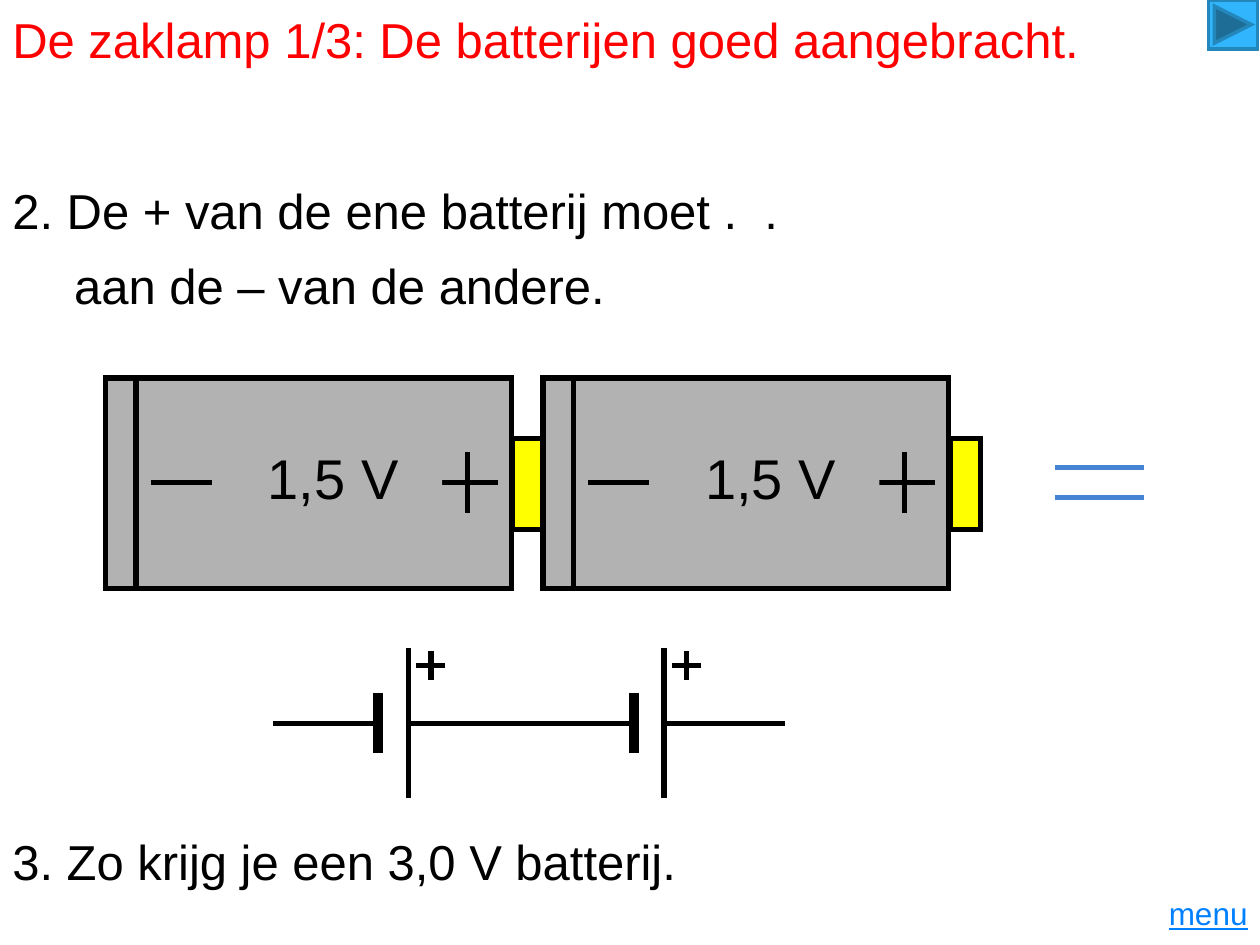
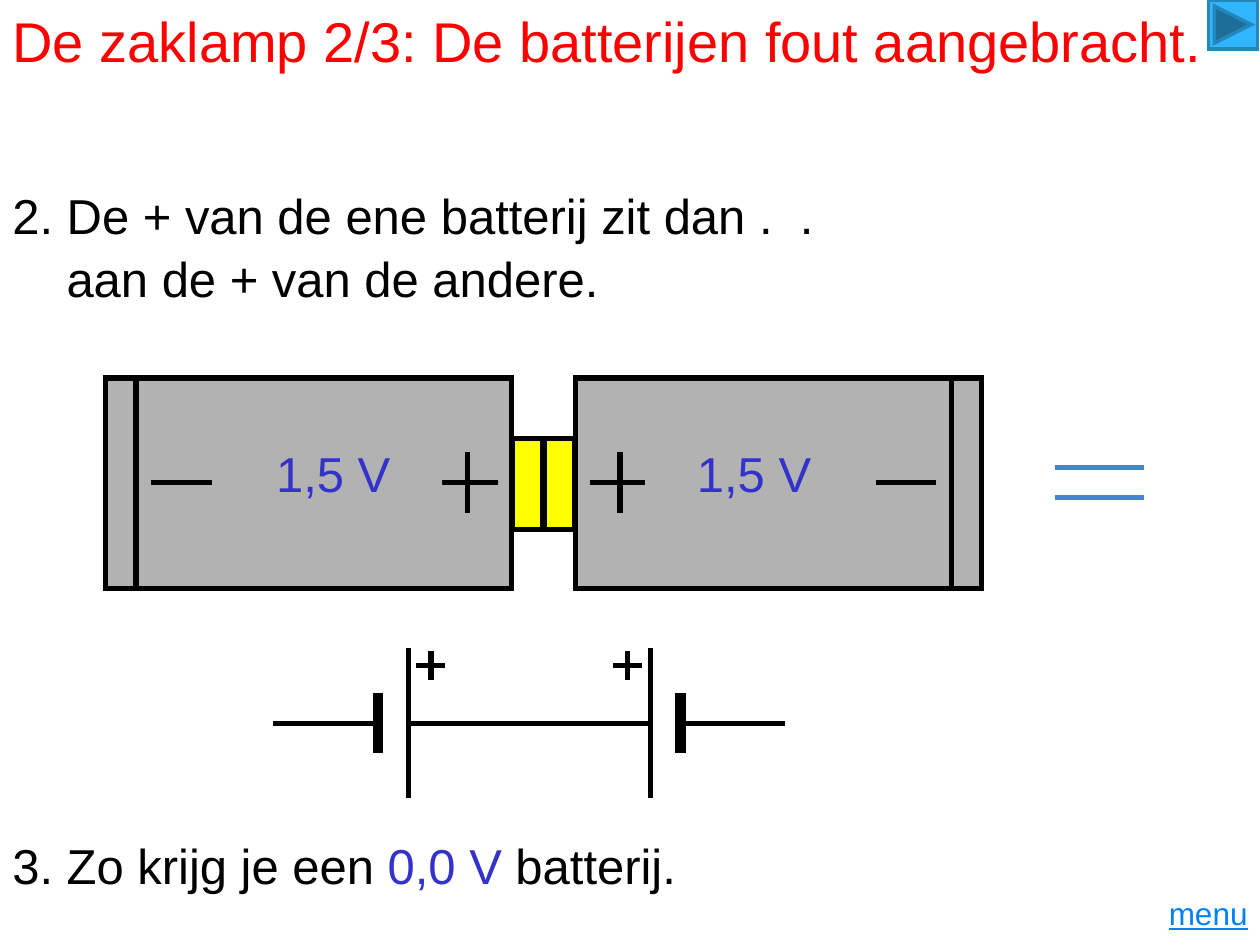
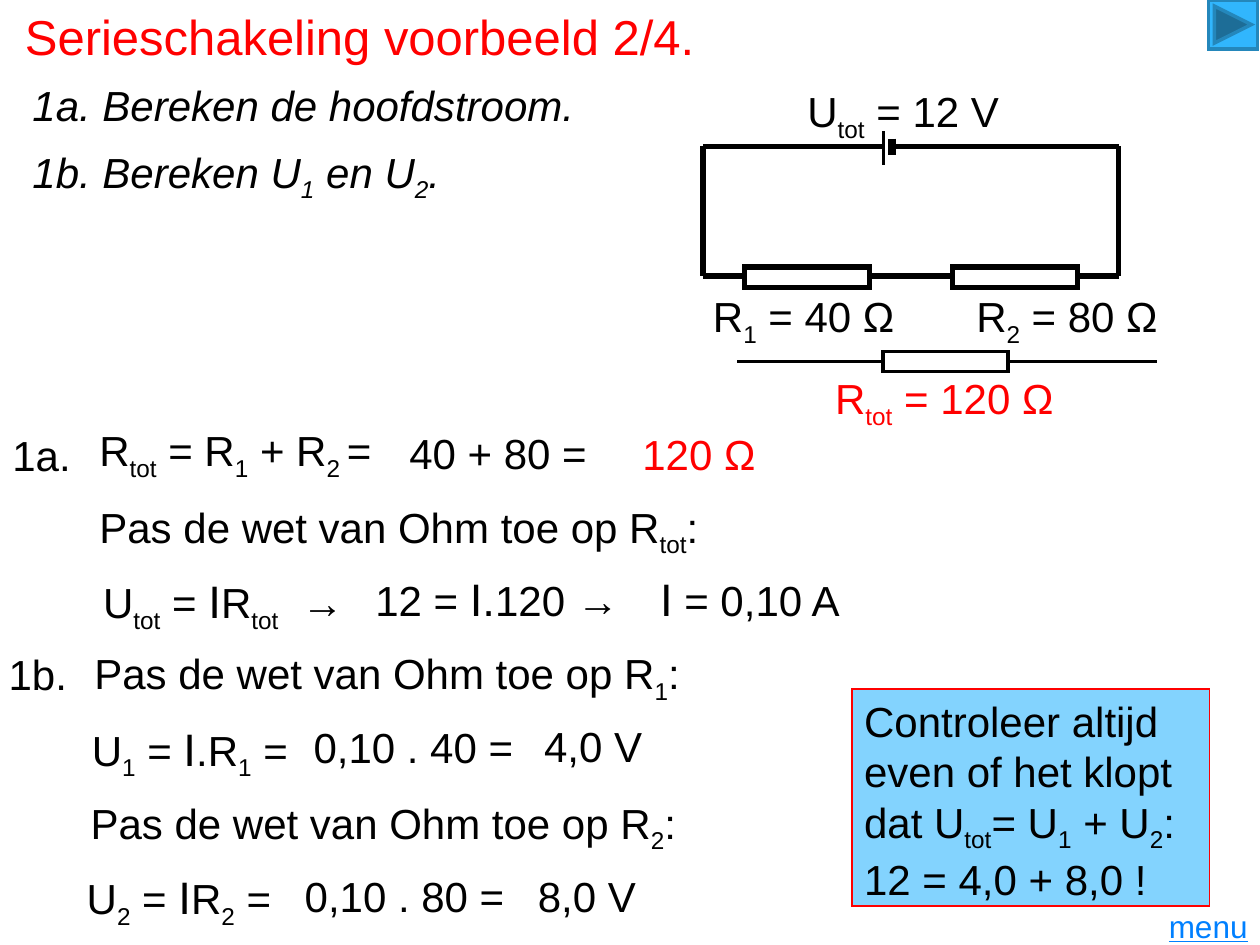
from lxml import etree
from pptx import Presentation, util as u
from pptx.dml.color import RGBColor
from pptx.enum import shapes, text
from pptx.oxml.ns import qn

FONT = "Arial"
BLACK = RGBColor(0x00, 0x00, 0x00)
WHITE = RGBColor(0xFF, 0xFF, 0xFF)
RED = RGBColor(0xFF, 0x00, 0x00)
BLUE = RGBColor(0x33, 0x33, 0xCC)
LINK = RGBColor(0x00, 0x80, 0xFF)
GREY = RGBColor(0xB2, 0xB2, 0xB2)
YELLOW = RGBColor(0xFF, 0xFF, 0x00)
EQUALS = RGBColor(0x45, 0x84, 0xD3)
BUTTON = RGBColor(0x31, 0xB6, 0xFD)
BUTTON_EDGE = RGBColor(0x24, 0x87, 0xBB)
NOTE = RGBColor(0x83, 0xD3, 0xFE)
MIDDLE = text.MSO_ANCHOR.MIDDLE


def add_runs(p, marked, size, color, italic=False, underline=False):
    """Write marked text: _subscript_, *larger symbol*, #blue#."""
    active, piece = set(), ""
    for char in marked + "\0":
        if char not in "_*#\0":
            piece += char
            continue
        if piece:
            r = p.add_run()
            r.text = piece
            r.font.name = FONT
            r.font.size = u.Pt(size + 2 if "*" in active else size)
            r.font.color.rgb = BLUE if "#" in active else color
            r.font.italic = italic
            r.font.underline = underline
            if "_" in active:
                r._r.get_or_add_rPr().set("baseline", "-25000")
        active ^= {char}
        piece = ""


def write(sp, marked, size, color=BLACK, align=text.PP_ALIGN.LEFT,
          anchor=text.MSO_ANCHOR.TOP, indent=0, **style):
    tf = sp.text_frame
    tf.word_wrap = True
    tf.vertical_anchor = anchor
    for i, line in enumerate(marked.split("\n")):
        p = tf.add_paragraph() if i else tf.paragraphs[0]
        p.alignment = align
        if indent:
            p._p.get_or_add_pPr().set("marL", str(u.Inches(indent)))
        add_runs(p, line, size, color, **style)


def add_text(s, x, y, w, h, marked, size=24, color=BLACK, **options):
    sp = s.shapes.add_textbox(*map(u.Inches, (x, y, w, h)))
    write(sp, marked, size, color, **options)


def add_box(s, x, y, w, h, fill=None, edge=None, width=3,
            kind=shapes.MSO_SHAPE.RECTANGLE):
    sp = s.shapes.add_shape(kind, *map(u.Inches, (x, y, w, h)))
    sp.shadow.inherit = False
    if fill is None:
        sp.fill.background()
    else:
        sp.fill.solid()
        sp.fill.fore_color.rgb = fill
    if edge is None:
        sp.line.fill.background()
    else:
        sp.line.color.rgb = edge
        sp.line.width = u.Pt(width)
        outline = sp._element.spPr.find(qn("a:ln"))
        etree.SubElement(outline, qn("a:miter"), lim="800000")
    return sp


def add_line(s, x1, y1, x2, y2, width=3, color=BLACK):
    c = s.shapes.add_connector(shapes.MSO_CONNECTOR.STRAIGHT,
                               *map(u.Inches, (x1, y1, x2, y2)))
    c.line.color.rgb = color
    c.line.width = u.Pt(width)
    etree.SubElement(c._element.spPr, qn("a:effectLst"))


def add_plus(s, x, y, size):
    add_line(s, x, y - size / 2, x, y + size / 2)
    add_line(s, x - size / 2, y, x + size / 2, y)


def add_battery(s, origin, size, color=BLACK, way=1):
    """Battery from its minus end at origin; way -1 points it to the left."""
    def part(start, y, w, h, fill, edge=None):
        ends = origin + way * start, origin + way * (start + w)
        return add_box(s, min(ends), y, w, h, fill, edge)

    part(0, 3, 3.22, 1.67, GREY, BLACK)
    part(3.23, 3.48, 0.24, 0.72, YELLOW, BLACK)
    stripe = origin + way * 0.24
    add_line(s, stripe, 3, stripe, 4.67)
    add_plus(s, origin + way * 2.87, 3.83, 0.48)
    add_line(s, origin + way * 0.36, 3.83, origin + way * 0.84, 3.83)
    label = part(0.94, 3.47, 1.73, size / 50, GREY)
    write(label, "1,5 V", size, color, align=text.PP_ALIGN.CENTER)


def add_cell_symbol(s, origin, way=1):
    """Circuit symbol of one cell, from its minus wire at origin."""
    minus, plate = origin + way * 0.83, origin + way * 1.07
    add_line(s, origin, 5.74, minus, 5.74)
    add_line(s, minus, 5.5, minus, 5.98, 6)
    add_line(s, plate, 5.74, origin + way * 2.03, 5.74)
    add_line(s, plate, 5.14, plate, 6.33)
    add_plus(s, origin + way * 1.25, 5.28, 0.23)


def add_equals(s):
    for y in (3.71, 3.95):
        add_line(s, 8.37, y, 9.08, y, color=EQUALS)


def new_slide(prs, title, size=28, top=0, indent=0, menu=(8.94, 6.99)):
    s = prs.slides.add_slide(prs.slide_layouts[6])
    add_text(s, 0, top, 10, size / 50, title, size, RED, indent=indent)
    x, y = menu
    add_text(s, x, y, 10 - x, 7.5 - y, "menu", 18, LINK, anchor=MIDDLE,
             align=text.PP_ALIGN.RIGHT, underline=True)
    add_box(s, 9.59, 0, 0.39, 0.39, BUTTON, BUTTON_EDGE, 2,
            shapes.MSO_SHAPE.ACTION_BUTTON_FORWARD_OR_NEXT)
    return s


def batteries_right(prs):
    s = new_slide(prs, "De zaklamp 1/3: De batterijen goed aangebracht.", top=0.03)
    add_text(s, 0, 1.42, 10, 0.5, "2. De + van de ene batterij moet .  .", 28,
             anchor=MIDDLE)
    add_text(s, 0, 1.93, 10, 0.67, "aan de – van de andere.", 28,
             anchor=MIDDLE, indent=0.49)
    add_text(s, 0, 6.58, 10, 0.5, "3. Zo krijg je een 3,0 V batterij.", 28,
             anchor=MIDDLE)
    for origin in (2.17, 4.2):
        add_cell_symbol(s, origin)
    for origin in (0.84, 4.31):
        add_battery(s, origin, 32)
    add_equals(s)


def batteries_wrong(prs):
    s = new_slide(prs, "De zaklamp 2/3: De batterijen fout aangebracht.", 32)
    add_text(s, 0, 1.42, 10, 0.57, "2. De + van de ene batterij zit dan .  .", 28)
    add_text(s, 0, 1.92, 10, 0.57, "aan de + van de andere.", 28, indent=0.43)
    add_text(s, 0, 6.58, 10, 0.57, "3. Zo krijg je een #0,0 V# batterij.", 28)
    for cell, battery, way in ((2.17, 0.84, 1), (6.23, 7.79, -1)):
        add_cell_symbol(s, cell, way)
        add_battery(s, battery, 28, BLUE, way)
    add_equals(s)


def add_circuit(s):
    left, right, top, bottom = 5.58, 8.88, 1.16, 2.19
    plate, minus = 7.01, 7.08
    add_line(s, plate, 1.04, plate, 1.31, 1.5)
    add_line(s, minus, 1.1, minus, 1.23, 4.5)
    add_line(s, left, top, plate, top)
    add_line(s, minus, top, right, top)
    for x in (left, right):
        add_line(s, x, top, x, bottom)
    start = left
    for x in (5.91, 7.56):
        add_line(s, start, bottom, x, bottom)
        add_box(s, x, 2.12, 0.99, 0.16, edge=BLACK)
        start = x + 0.99
    add_line(s, start, bottom, right, bottom)
    add_line(s, 5.85, 2.87, 9.18, 2.87, 2)
    add_box(s, 7.01, 2.79, 0.99, 0.16, WHITE, BLACK, 2)
    add_text(s, 6.31, 0.63, 2.2, 0.5, "U_tot_ = 12 V")
    add_text(s, 5.56, 2.26, 1.68, 0.5, "R_1_ = 40 Ω")
    add_text(s, 7.65, 2.26, 1.77, 0.5, "R_2_ = 80 Ω")
    add_text(s, 6.53, 2.91, 2.34, 0.5, "R_tot_ = 120 Ω", color=RED)


def series_example(prs):
    s = new_slide(prs, "Serieschakeling voorbeeld 2/4.", indent=0.1,
                  menu=(9.06, 7.19))
    add_circuit(s)
    for y, question in ((0.58, "1a. Bereken de hoofdstroom."),
                        (1.11, "1b. Bereken U_1_ en U_2_.")):
        add_text(s, 0.06, y, 5.86, 0.5, question, indent=0.1, italic=True)
    steps = (
        (0, 3.36, 0.82, "1a."),
        (0.69, 3.32, 3.33, "R_tot_ = R_1_ + R_2 _="),
        (3.15, 3.34, 1.85, "40 + 80 ="),
        (0.69, 3.93, 5.69, "Pas de wet van Ohm toe op R_tot_:"),
        (0.72, 4.5, 2.22, "U_tot_ = *I*R_tot_  →"),
        (2.88, 4.48, 2.41, "12 = *I.*120 →"),
        (5.14, 4.48, 2.42, "*I* = 0,10 A"),
        (-0.03, 5.1, 0.85, "1b."),
        (0.65, 5.09, 5.69, "Pas de wet van Ohm toe op R_1_:"),
        (0.63, 5.67, 1.95, "U_1_ = *I*.R_1_ ="),
        (2.39, 5.68, 1.9, "0,10 . 40 ="),
        (4.22, 5.67, 1.09, "4,0 V"),
        (0.62, 6.28, 5.69, "Pas de wet van Ohm toe op R_2_:"),
        (0.59, 6.85, 2.13, "U_2_ = *I*R_2_ ="),
        (2.32, 6.86, 2.41, "0,10 . 80 ="),
        (4.17, 6.86, 1.21, "8,0 V"),
    )
    for x, y, w, step in steps:
        add_text(s, x, y, w, 0.54 if "*" in step else 0.5, step)
    add_text(s, 5, 3.35, 1.68, 0.5, "120 Ω", color=RED)
    check = add_box(s, 6.76, 5.47, 2.84, 1.72, NOTE, RED, 1)
    write(check, "Controleer altijd even of het klopt dat U_tot_= U_1_ + U_2_:\n"
                 "12 = 4,0 + 8,0 !", 24)


def main():
    prs = Presentation()
    prs.slide_width, prs.slide_height = u.Inches(10), u.Inches(7.5)
    batteries_right(prs)
    batteries_wrong(prs)
    series_example(prs)
    prs.save("out.pptx")


if __name__ == "__main__":
    main()
